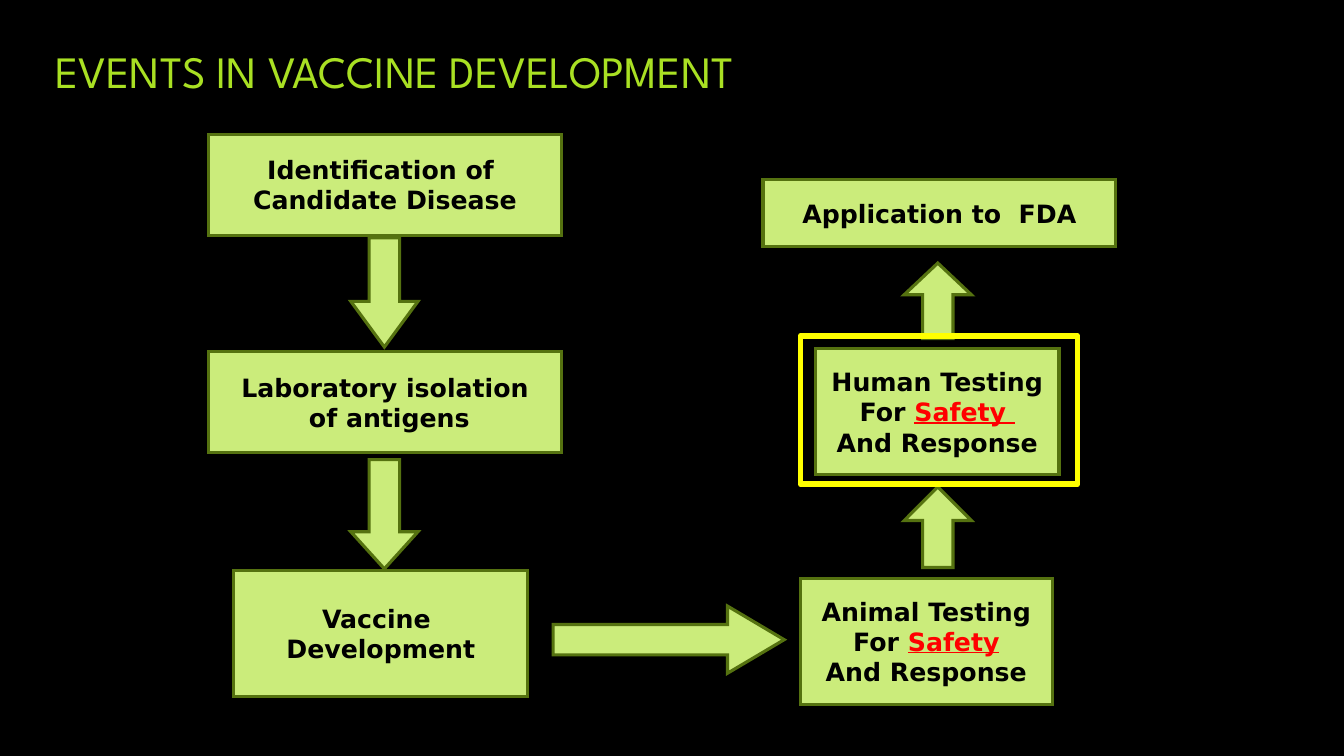
from dataclasses import dataclass

from lxml import etree
from pptx import Presentation
from pptx.dml.color import RGBColor
from pptx.enum.shapes import MSO_SHAPE
from pptx.enum.text import MSO_ANCHOR, PP_ALIGN
from pptx.oxml.ns import qn
from pptx.util import Inches, Pt

RECTANGLE = MSO_SHAPE.RECTANGLE
DOWN_ARROW = MSO_SHAPE.DOWN_ARROW
MIDDLE = MSO_ANCHOR.MIDDLE
LEFT, CENTER = PP_ALIGN.LEFT, PP_ALIGN.CENTER

WIDTH, HEIGHT = Inches(13.33), Inches(7.5)
COLUMNS, ROWS = 160, 90

BLACK, LIME, OLIVE = "000000", "CBEC7B", "557210"
TITLE_GREEN, RED, YELLOW = "A9E023", "FF0000", "FFFF00"
BODY_FONT, TITLE_FONT = "DejaVu Sans", "League Spartan"

LEFT_STEPS, LEFT_ARROWS, RIGHT_ARROWS = 24.84, 41.76, 107.64
STEP_WIDTH, ARROW_WIDTH, SHAFT_SHARE = 42, 8, 0.453
TESTING_EDGE = 95.28
HIGHLIGHT = "Safety"


@dataclass(frozen=True)
class Area:
    column: float
    row: float
    columns: float
    rows: float

    def emu(self) -> tuple[int, int, int, int]:
        return (
            round(WIDTH * self.column / COLUMNS),
            round(HEIGHT * self.row / ROWS),
            round(WIDTH * self.columns / COLUMNS),
            round(HEIGHT * self.rows / ROWS),
        )


@dataclass(frozen=True)
class Step:
    area: Area
    lines: tuple[str, ...]


@dataclass(frozen=True)
class Arrow:
    column: float
    row: float
    length: float
    head_share: float
    rotation: int = 0


STEPS = (
    Step(Area(TESTING_EDGE, 68.88, 30, 15), ("Animal Testing", "For Safety", "And Response")),
    Step(Area(LEFT_STEPS, 16, STEP_WIDTH, 12), ("Identification of ", "Candidate Disease")),
    Step(Area(97.08, 41.52, 29, 15), ("Human Testing", "For Safety ", "And Response")),
    Step(Area(90.84, 21.36, STEP_WIDTH, 8), ("Application to  FDA",)),
    Step(Area(LEFT_STEPS, 41.88, STEP_WIDTH, 12), ("Laboratory isolation", " of antigens")),
    Step(Area(27.84, 67.92, 35, 15), ("Vaccine ", "Development")),
)
ARROWS = (
    Arrow(RIGHT_ARROWS, 57.96, 9.6, 0.501, 180),
    Arrow(75.6, 62.4, 27.5, 0.843, 270),
    Arrow(LEFT_ARROWS, 28.32, 13, 0.68),
    Arrow(LEFT_ARROWS, 54.72, 13, 0.552),
    Arrow(RIGHT_ARROWS, 31.32, 9, 0.471, 180),
)
TITLE_AREA = Area(5.4, 3.6, 112.8, 9.6)
HUMAN_TESTING_FRAME = Area(TESTING_EDGE, 40, 33, 17.64)


def rgb(color: str) -> RGBColor:
    return RGBColor.from_string(color)


def write(paragraph, text: str, *, size=18, font=BODY_FONT, color=BLACK,
          bold=True, underline=None, align=CENTER) -> None:
    paragraph.alignment = align
    run = paragraph.add_run()
    run.text = text
    run.font.size = Pt(size)
    run.font.name = font
    run.font.color.rgb = rgb(color)
    run.font.bold = bold
    run.font.underline = underline


def draw_shape(slide, kind, area: Area, *, fill=LIME, line=OLIVE, weight=2.25, join="miter"):
    shape = slide.shapes.add_shape(kind, *area.emu())
    shape.shadow.inherit = False
    if fill:
        shape.fill.solid()
        shape.fill.fore_color.rgb = rgb(fill)
    else:
        shape.fill.background()
    shape.line.color.rgb = rgb(line)
    shape.line.width = Pt(weight)
    etree.SubElement(shape.line._get_or_add_ln(), qn(f"a:{join}"))
    return shape


def draw_step(slide, step: Step) -> None:
    frame = draw_shape(slide, RECTANGLE, step.area).text_frame
    frame.word_wrap = False
    frame.vertical_anchor = MIDDLE
    for index, line in enumerate(step.lines):
        paragraph = frame.add_paragraph() if index else frame.paragraphs[0]
        before, highlight, after = line.partition(HIGHLIGHT)
        write(paragraph, before)
        if highlight:
            write(paragraph, highlight + after, color=RED, underline=True)


def draw_arrow(slide, arrow: Arrow) -> None:
    area = Area(arrow.column, arrow.row, ARROW_WIDTH, arrow.length)
    shape = draw_shape(slide, DOWN_ARROW, area)
    shape.adjustments[0] = SHAFT_SHARE
    shape.adjustments[1] = arrow.head_share
    shape.rotation = arrow.rotation


def draw_title(slide) -> None:
    frame = slide.shapes.add_textbox(*TITLE_AREA.emu()).text_frame
    frame.word_wrap = True
    frame.vertical_anchor = MIDDLE
    write(frame.paragraphs[0], "EVENTS IN VACCINE DEVELOPMENT", size=32,
          font=TITLE_FONT, color=TITLE_GREEN, bold=False, align=LEFT)


def main() -> None:
    presentation = Presentation()
    presentation.slide_width, presentation.slide_height = WIDTH, HEIGHT
    slide = presentation.slides.add_slide(presentation.slide_layouts[6])
    slide.background.fill.solid()
    slide.background.fill.fore_color.rgb = rgb(BLACK)
    for step in STEPS:
        draw_step(slide, step)
    for arrow in ARROWS:
        draw_arrow(slide, arrow)
    draw_title(slide)
    draw_shape(slide, RECTANGLE, HUMAN_TESTING_FRAME, fill=None,
               line=YELLOW, weight=4, join="round")
    presentation.save("out.pptx")


if __name__ == "__main__":
    main()
